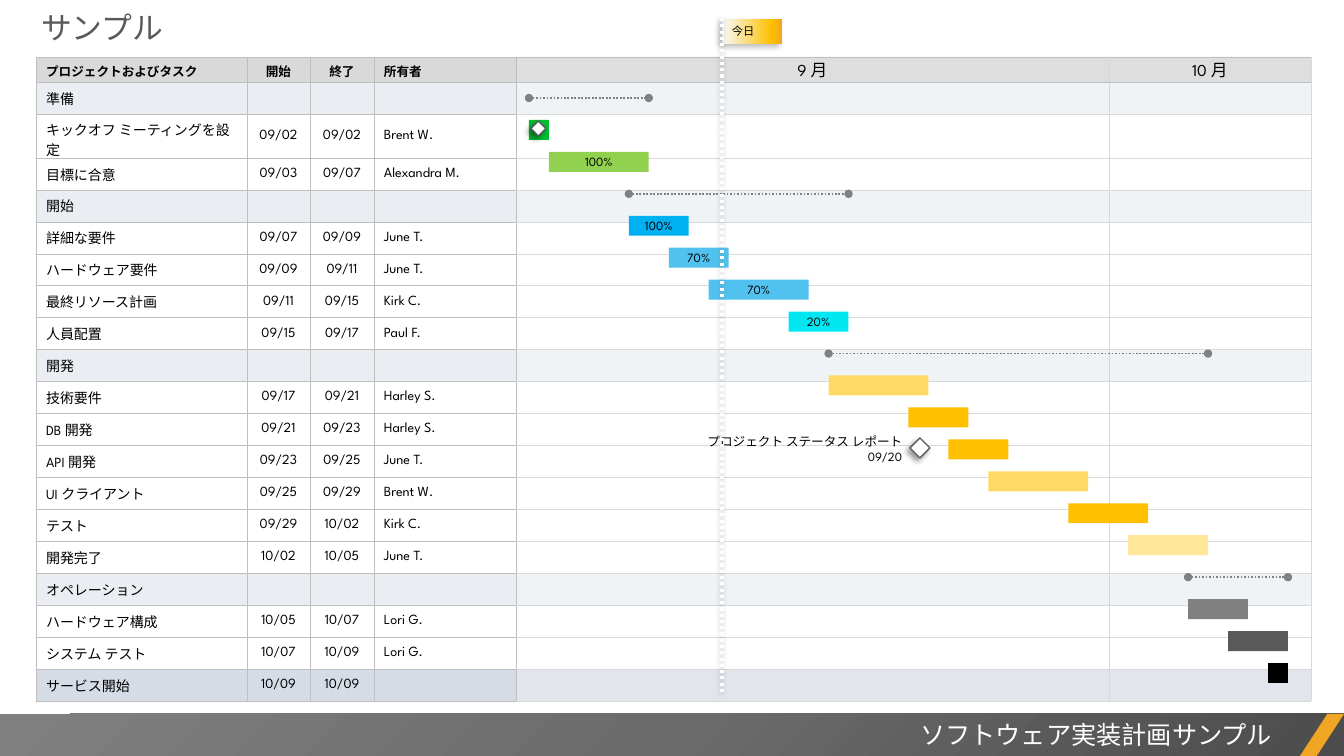
from dataclasses import dataclass

from lxml import etree
from pptx import Presentation
from pptx.dml.color import RGBColor
from pptx.enum.dml import MSO_LINE
from pptx.enum.shapes import MSO_CONNECTOR, MSO_SHAPE
from pptx.enum.text import MSO_ANCHOR, PP_ALIGN
from pptx.oxml.ns import qn
from pptx.util import Emu, Pt

LEFT, CENTER, RIGHT = PP_ALIGN.LEFT, PP_ALIGN.CENTER, PP_ALIGN.RIGHT
MIDDLE, TOP = MSO_ANCHOR.MIDDLE, MSO_ANCHOR.TOP
RECTANGLE, DIAMOND = MSO_SHAPE.RECTANGLE, MSO_SHAPE.DIAMOND
SLANT, STRAIGHT = MSO_SHAPE.PARALLELOGRAM, MSO_CONNECTOR.STRAIGHT


@dataclass(frozen=True)
class Theme:
    font: str = "League Spartan"
    ink: str = "000000"
    white: str = "FFFFFF"
    grey: str = "808080"
    dark: str = "595959"
    border: str = "BFBFBF"
    grid: str = "D9D9D9"
    phase: str = "EAEEF3"
    launch: str = "D6DCE5"
    accent: str = "F0A622"
    green: str = "00BD32"
    lime: str = "92D050"
    blue: str = "00B0F0"
    sky: str = "51C2F0"
    cyan: str = "00E7F2"
    gold: str = "FFC000"
    sand: str = "FFD966"
    cream: str = "FFE699"
    title: int = 22
    footer: int = 18
    month: int = 12
    body: int = 10
    small: int = 9
    flag: int = 8


THEME = Theme()

# Content
TITLE, FOOTER, TODAY = "サンプル", "ソフトウェア実装計画サンプル", "今日"
STATUS = "プロジェクト ステータス レポート 09/20"
HEADINGS = ["プロジェクトおよびタスク", "開始", "終了", "所有者", "9 月", "10 月"]
# kind, name, start, end, owner, bar colour, progress
ROWS = [
    ("phase", "準備", "09/02", "09/07", "", "", ""),
    ("task", "キックオフ ミーティングを設定", "09/02", "09/02", "Brent W.", THEME.green, ""),
    ("task", "目標に合意", "09/03", "09/07", "Alexandra M.", THEME.lime, "100%"),
    ("phase", "開始", "09/07", "09/17", "", "", ""),
    ("task", "詳細な要件", "09/07", "09/09", "June T.", THEME.blue, "100%"),
    ("task", "ハードウェア要件", "09/09", "09/11", "June T.", THEME.sky, "70%"),
    ("task", "最終リソース計画", "09/11", "09/15", "Kirk C.", THEME.sky, "70%"),
    ("task", "人員配置", "09/15", "09/17", "Paul F.", THEME.cyan, "20%"),
    ("phase", "開発", "09/17", "10/05", "", "", ""),
    ("task", "技術要件", "09/17", "09/21", "Harley S.", THEME.sand, ""),
    ("task", "DB 開発", "09/21", "09/23", "Harley S.", THEME.gold, ""),
    ("task", "API 開発", "09/23", "09/25", "June T.", THEME.gold, ""),
    ("task", "UI クライアント", "09/25", "09/29", "Brent W.", THEME.sand, ""),
    ("task", "テスト", "09/29", "10/02", "Kirk C.", THEME.gold, ""),
    ("task", "開発完了", "10/02", "10/05", "June T.", THEME.cream, ""),
    ("phase", "オペレーション", "10/05", "10/09", "", "", ""),
    ("task", "ハードウェア構成", "10/05", "10/07", "Lori G.", THEME.grey, ""),
    ("task", "システム テスト", "10/07", "10/09", "Lori G.", THEME.dark, ""),
    ("launch", "サービス開始", "10/09", "10/09", "", THEME.ink, ""),
]
# kind: table fill, chart fill, chart opacity in percent
ROW_FILLS = {
    "header": (THEME.grid, THEME.border, 50),
    "phase": (THEME.phase, THEME.phase, 70),
    "task": (THEME.white, THEME.white, 50),
    "launch": (THEME.launch, THEME.launch, 70),
}
ALIGNMENTS = [LEFT, CENTER, CENTER, LEFT, CENTER, CENTER]

# Layout in px
SCALE = 12192000 / 1344
WIDTH, HEIGHT = 1344, 756
TABLE_LEFT, TABLE_TOP, TABLE_HEIGHT, HEADER_HEIGHT = 36, 57, 632, 25
COLUMNS = [211, 63, 64, 142, 593, 202]
ROW_HEIGHT = (TABLE_HEIGHT - HEADER_HEIGHT) / len(ROWS)
DAY_ONE, DAY_WIDTH = 529, 739 / 37
BAR_HEIGHT, BAR_OFFSET, SUMMARY_OFFSET = 20, 6, 16
TODAY_X = 722


def px(length):
    return Emu(round(length * SCALE))


def place(*lengths):
    return [px(length) for length in lengths]


def rgb(code):
    return RGBColor.from_string(code)


def apply(target, **values):
    for name, value in values.items():
        setattr(target, name, value)


def add(parent, tag, **attributes):
    return etree.SubElement(parent, qn(tag), {key: str(value) for key, value in attributes.items()})


def write(frame, text, size, color=THEME.ink, align=LEFT, bold=False):
    para = frame.paragraphs[0]
    para.alignment = align
    span = para.add_run()
    span.text = text
    apply(span.font, name=THEME.font, size=Pt(size), bold=bold)
    span.font.color.rgb = rgb(color)


def add_shadow(effects, color, alpha, blur, distance):
    shadow = add(effects, "a:outerShdw", blurRad=Pt(blur), dist=Pt(distance),
                 dir=135 * 60000, algn="tr", rotWithShape=0)
    add(add(shadow, "a:srgbClr", val=color), "a:alpha", val=alpha * 1000)


def add_block(shapes, kind, box, color, outline=None, shadow=None):
    block = shapes.add_shape(kind, *place(*box))
    block.shadow.inherit = False
    block.fill.solid()
    block.fill.fore_color.rgb = rgb(color)
    if outline:
        block.line.color.rgb = rgb(outline)
        block.line.width = Pt(1)
    else:
        block.line.fill.background()
    if shadow:
        add_shadow(block.element.spPr.find(qn("a:effectLst")), *shadow)
    return block


def set_gradient(block, stops, radial=False):
    solid = block.element.spPr.find(qn("a:solidFill"))
    gradient = etree.Element(qn("a:gradFill"), rotWithShape="1")
    stop_list = add(gradient, "a:gsLst")
    for position, color in stops:
        add(add(stop_list, "a:gs", pos=position * 1000), "a:srgbClr", val=color)
    if radial:
        add(add(gradient, "a:path", path="circle"), "a:fillToRect", l=100000, t=100000)
    else:
        add(gradient, "a:lin", ang=0, scaled=0)
    solid.getparent().replace(solid, gradient)


def add_dotted(shapes, ends, color, width, ovals=False, shadow=None):
    line = shapes.add_connector(STRAIGHT, *place(*ends))
    line.line.color.rgb = rgb(color)
    apply(line.line, width=Pt(width), dash_style=MSO_LINE.ROUND_DOT)
    properties = line.element.spPr
    if ovals:
        for tag in ("a:headEnd", "a:tailEnd"):
            add(properties.find(qn("a:ln")), tag, type="oval")
    effects = add(properties, "a:effectLst")
    if shadow:
        add_shadow(effects, *shadow)


def add_text(page, box, text, size, color, anchor):
    frame = page.shapes.add_textbox(*place(*box)).text_frame
    apply(frame, word_wrap=True, vertical_anchor=anchor)
    write(frame, text, size, color, RIGHT)


def fill_cell(cell, row, column, kind, text):
    in_chart, header = column > 3, kind == "header"
    table_fill, chart_fill, opacity = ROW_FILLS[kind]
    cell.fill.solid()
    cell.fill.fore_color.rgb = rgb(chart_fill if in_chart else table_fill)
    cell.vertical_anchor = MIDDLE
    size = THEME.body
    if header:
        size = THEME.month if in_chart else THEME.small
    if in_chart:
        apply(cell, margin_left=0, margin_right=0, margin_top=0, margin_bottom=0)
    if text:
        write(cell.text_frame, text, size, align=ALIGNMENTS[column], bold=header and not in_chart)
    else:
        add(cell.text_frame.paragraphs[0]._p, "a:endParaRPr", sz=size * 100)
    properties = cell._tc.tcPr
    if in_chart:
        add(properties.find(".//" + qn("a:srgbClr")), "a:alpha", val=opacity * 1000)
    strong = {"L": column < 5, "R": not in_chart, "T": not in_chart or row < 2,
              "B": not in_chart or header}
    for index, (side, is_strong) in enumerate(strong.items()):
        line = etree.Element(qn("a:ln" + side), w=str(Pt(0.5)))
        add(add(line, "a:solidFill"), "a:srgbClr", val=THEME.border if is_strong else THEME.grid)
        properties.insert(index, line)


def add_schedule(page):
    frame = page.shapes.add_table(len(ROWS) + 1, len(COLUMNS), *place(
        TABLE_LEFT, TABLE_TOP, sum(COLUMNS), TABLE_HEIGHT))
    table = frame.table
    apply(table, first_row=False, horz_banding=False)
    for column, width in zip(table.columns, COLUMNS):
        column.width = px(width)
    lines = [("header", HEADINGS)]
    for kind, name, start, end, owner, _, _ in ROWS:
        dates = ["", ""] if kind == "phase" else [start, end]
        lines.append((kind, [name, *dates, owner, "", ""]))
    for row, (kind, texts) in enumerate(lines):
        table.rows[row].height = px(ROW_HEIGHT if row else HEADER_HEIGHT)
        for column, text in enumerate(texts):
            fill_cell(table.cell(row, column), row, column, kind, text)


def day_x(date, extra=0):
    month, day = map(int, date.split("/"))
    return DAY_ONE + ((month - 9) * 30 + day - 2 + extra) * DAY_WIDTH


def add_bars(page):
    for index, (kind, _, start, end, _, color, progress) in enumerate(ROWS):
        top = TABLE_TOP + HEADER_HEIGHT + index * ROW_HEIGHT
        left, right = day_x(start), day_x(end, 1)
        if kind == "phase":
            y = top + SUMMARY_OFFSET
            add_dotted(page.shapes, (left, y, right, y), THEME.grey, 1.25, ovals=True)
            continue
        bar = add_block(page.shapes, RECTANGLE, (left, top + BAR_OFFSET, right - left, BAR_HEIGHT), color)
        if progress:
            bar.text_frame.vertical_anchor = MIDDLE
            write(bar.text_frame, progress, THEME.small, align=CENTER)


def main():
    deck = Presentation()
    apply(deck, slide_width=px(WIDTH), slide_height=px(HEIGHT))
    page = deck.slides.add_slide(deck.slide_layouts[5])

    # Title and footer band
    title = page.shapes.title
    apply(title, **dict(zip(("left", "top", "width", "height"), place(31, 4, 667, 47))))
    write(title.text_frame, TITLE, THEME.title, THEME.dark)
    band = add_block(page.shapes, RECTANGLE, (0, 714, WIDTH, 42), THEME.grey)
    set_gradient(band, [(0, "4C4C4C"), (50, "6B6B6B"), (100, THEME.grey)], radial=True)
    add_block(page.shapes, SLANT, (1300, 714, 44, 42), THEME.accent).adjustments[0] = 0.65
    add_text(page, (529, 714, 753, 40), FOOTER, THEME.footer, THEME.white, TOP)

    # Schedule, bars and milestones
    add_schedule(page)
    add_bars(page)
    for milestone in ((531, 121, 15, 15), (910, 438, 20, 20)):
        add_block(page.shapes, DIAMOND, milestone, THEME.white, THEME.dark, (THEME.ink, 40, 4, 3))
    add_text(page, (664, 434, 248, 30), STATUS, THEME.small, THEME.ink, MIDDLE)

    # Today marker
    marker = page.shapes.add_group_shape().shapes
    flag = add_block(marker, RECTANGLE, (TODAY_X, 19, 60, 25), THEME.gold, shadow=(THEME.ink, 25, 4, 3))
    set_gradient(flag, [(0, "F7FAFD"), (83, THEME.gold), (100, THEME.accent)])
    flag.text_frame.vertical_anchor = MIDDLE
    write(flag.text_frame, TODAY, THEME.flag)
    add_dotted(marker, (TODAY_X, 18, TODAY_X, 693), THEME.white, 2.25, shadow=(THEME.grey, 50, 3, 1))
    deck.save("out.pptx")


if __name__ == "__main__":
    main()
